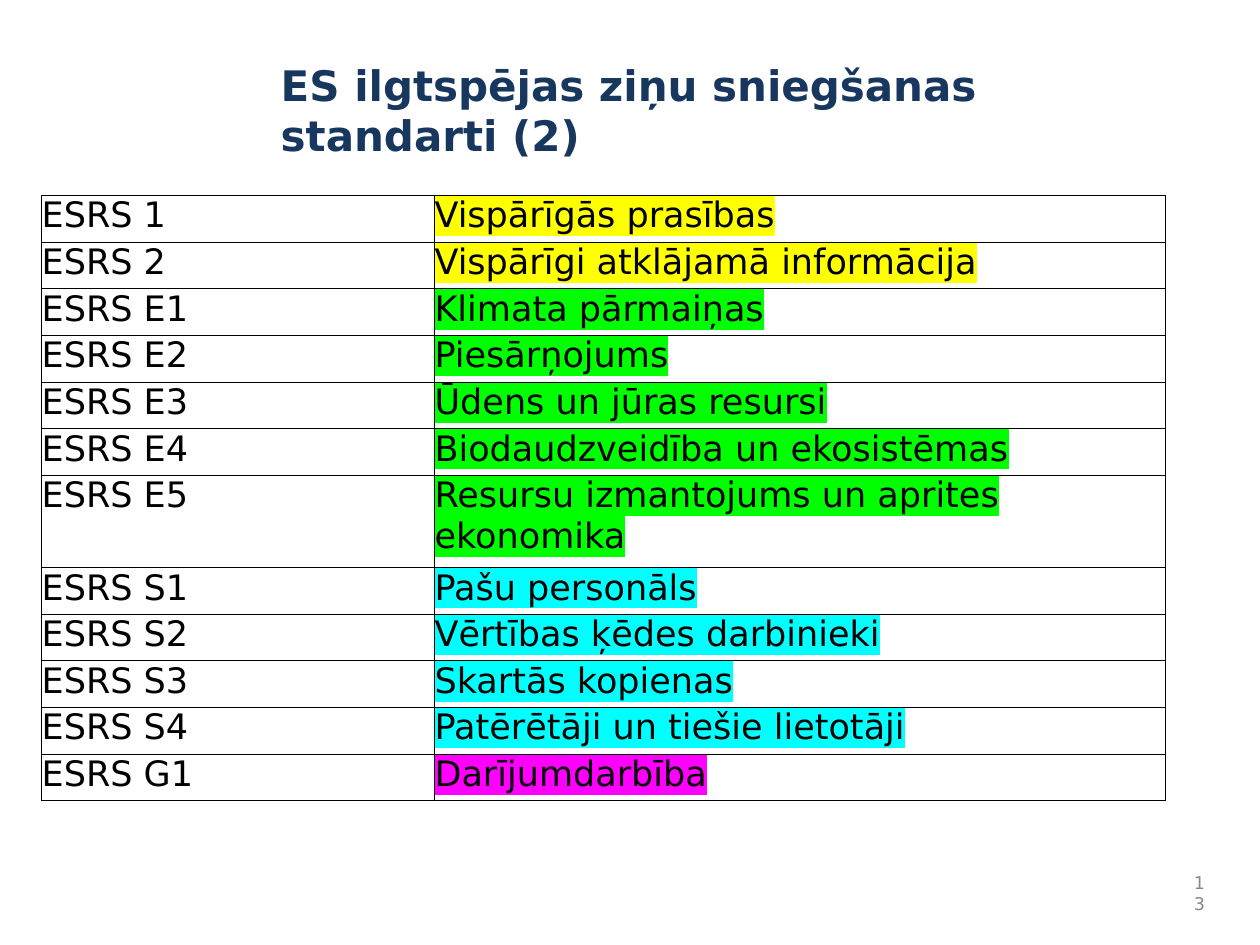
"""Builds a slide that lists the ESRS sustainability reporting standards."""
from dataclasses import dataclass

from lxml import etree
from pptx import Presentation
from pptx import util as u
from pptx.dml.color import RGBColor
from pptx.enum import text as t
from pptx.oxml.ns import qn


@dataclass(frozen=True)
class Theme:
    face: str = "DejaVu Sans"
    navy: str = "17375E"
    ink: str = "000000"
    gray: str = "898989"
    paper: str = "FFFFFF"
    base: str = "FFFF00"
    green: str = "00FF00"
    cyan: str = "00FFFF"
    pink: str = "FF00FF"
    head: float = 24
    body: float = 20
    note: float = 10
    rule: float = 0.6


class Deck:
    def __init__(self, theme):
        self.theme = theme
        self.show = Presentation()
        self.show.slide_width = u.Cm(25.4)
        self.show.slide_height = u.Cm(19.05)
        self.slide = self.show.slides.add_slide(self.show.slide_layouts[6])

    def style(self, para, size, color, bold=False):
        font = para.font
        font.name, font.size, font.bold = self.theme.face, u.Pt(size), bold
        font.color.rgb = RGBColor.from_string(color)

    def label(self, words, place, size, color, bold=False,
              align=t.PP_ALIGN.LEFT, anchor=t.MSO_ANCHOR.TOP):
        frame = self.slide.shapes.add_textbox(*map(u.Cm, place)).text_frame
        frame.word_wrap = True
        frame.vertical_anchor = anchor
        para = frame.paragraphs[0]
        para.text, para.alignment = words, align
        self.style(para, size, color, bold)

    def solid(self, node, tag, color):
        fill = etree.SubElement(node, qn(tag))
        etree.SubElement(fill, qn("a:srgbClr"), val=color)

    def cell(self, cell, words, mark=None):
        look = self.theme
        cell.margin_left = cell.margin_right = 0
        cell.margin_top = cell.margin_bottom = 0
        cell.fill.solid()
        cell.fill.fore_color.rgb = RGBColor.from_string(look.paper)
        para = cell.text_frame.paragraphs[0]
        run = para.add_run()
        run.text = words
        self.style(para, look.body, look.ink)
        if mark:
            self.solid(run.font._element, "a:highlight", mark)
        props = cell._tc.get_or_add_tcPr()
        for spot, side in enumerate(("a:lnL", "a:lnR", "a:lnT", "a:lnB")):
            line = etree.Element(qn(side), w=str(u.Pt(look.rule)))
            self.solid(line, "a:solidFill", look.ink)
            props.insert(spot, line)

    def table(self, rows, place, wide, tall):
        grid = self.slide.shapes.add_table(
            len(rows), len(wide), *map(u.Cm, place)).table
        grid.first_row = grid.horz_banding = False
        for col, width in zip(grid.columns, wide):
            col.width = u.Cm(width)
        for row, height, (code, name, mark) in zip(grid.rows, tall, rows):
            row.height = u.Cm(height)
            self.cell(row.cells[0], code)
            self.cell(row.cells[1], name, mark)


def main():
    theme = Theme()
    deck = Deck(theme)
    deck.label("ES ilgtspējas ziņu sniegšanas standarti (2)",
               (5.41, 1.07, 18.72, 2.87), theme.head, theme.navy, bold=True)

    rows = [
        ("ESRS 1", "Vispārīgās prasības", theme.base),
        ("ESRS 2", "Vispārīgi atklājamā informācija", theme.base),
        ("ESRS E1", "Klimata pārmaiņas", theme.green),
        ("ESRS E2", "Piesārņojums", theme.green),
        ("ESRS E3", "Ūdens un jūras resursi", theme.green),
        ("ESRS E4", "Biodaudzveidība un ekosistēmas", theme.green),
        ("ESRS E5", "Resursu izmantojums un aprites ekonomika", theme.green),
        ("ESRS S1", "Pašu personāls", theme.cyan),
        ("ESRS S2", "Vērtības ķēdes darbinieki", theme.cyan),
        ("ESRS S3", "Skartās kopienas", theme.cyan),
        ("ESRS S4", "Patērētāji un tiešie lietotāji", theme.cyan),
        ("ESRS G1", "Darījumdarbība", theme.pink),
    ]
    tall = [1.86 if code.endswith("E5") else 0.94 for code, *_ in rows]
    wide = (7.92, 14.73)
    deck.table(rows, (0.84, 3.94, sum(wide), sum(tall)), wide, tall)

    deck.label("13", (23.7, 17.58, 0.84, 0.84), theme.note, theme.gray,
               align=t.PP_ALIGN.RIGHT, anchor=t.MSO_ANCHOR.MIDDLE)
    deck.show.save("out.pptx")


if __name__ == "__main__":
    main()
